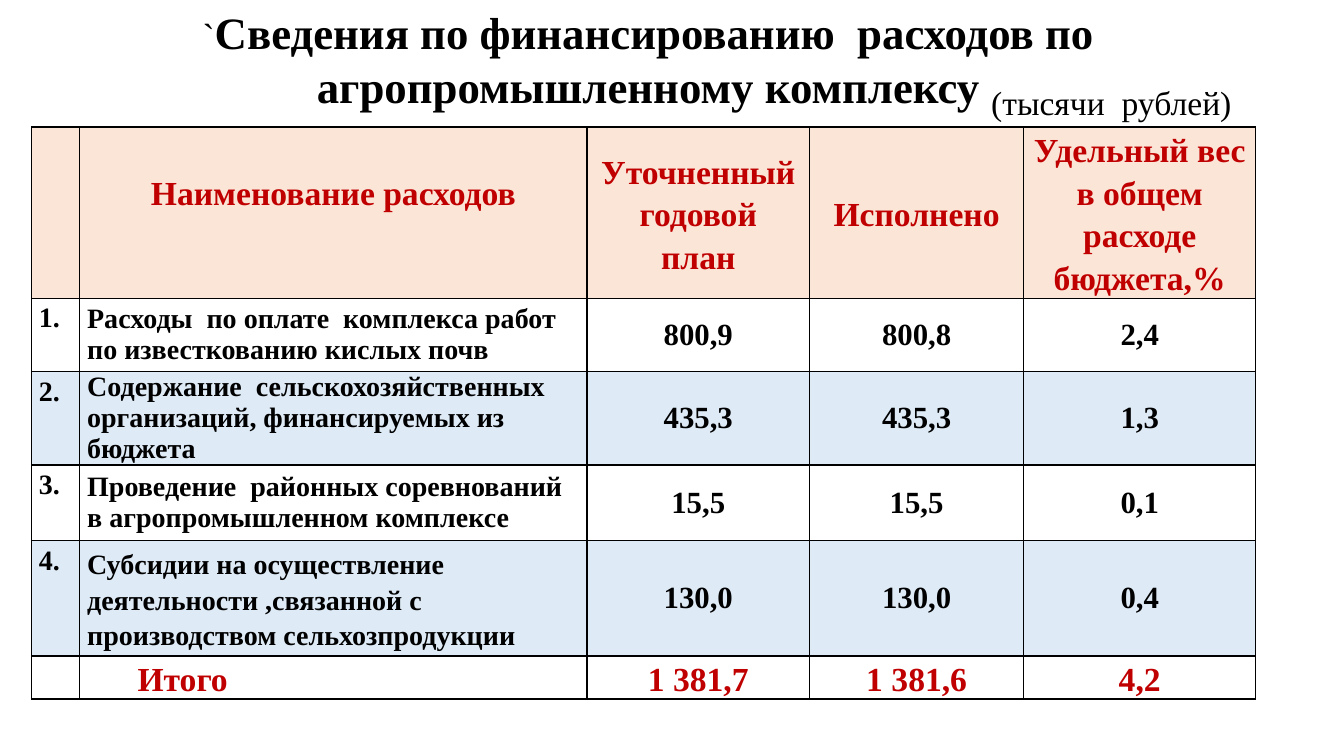
"""Build the slide on agro-industrial budget spending."""
from dataclasses import dataclass

from lxml.etree import SubElement
from pptx import Presentation
from pptx.dml.color import RGBColor
from pptx.enum.text import MSO_ANCHOR, MSO_AUTO_SIZE, PP_ALIGN
from pptx.oxml.ns import qn
from pptx.slide import Slide
from pptx.table import _Cell
from pptx.util import Pt

EMU_PER_PX = 9525
FONT = "Times New Roman"
COLORS = {
    "black": "000000",
    "red": "C00000",
    "peach": "FBE5D6",
    "blue": "DEEBF7",
    "white": "FFFFFF",
}
COLUMN_WIDTHS = (46, 483, 212, 204, 221)


@dataclass(frozen=True)
class CellStyle:
    size: int
    color: str = "black"
    align: PP_ALIGN = PP_ALIGN.CENTER
    anchor: MSO_ANCHOR = MSO_ANCHOR.MIDDLE
    spacing: float = 1.0
    left: int = 7
    top: int = 0


@dataclass(frozen=True)
class TableRow:
    height: int
    fill: str
    texts: tuple[str, ...]
    styles: tuple[CellStyle, ...]


@dataclass(frozen=True)
class TextRun:
    text: str
    size: int
    bold: bool = False


@dataclass(frozen=True)
class Caption:
    box: tuple[int, int, int, int]
    runs: tuple[TextRun, ...]


HEADER = CellStyle(24, "red", spacing=1.15)
HEADER_TOP = CellStyle(24, "red", anchor=MSO_ANCHOR.TOP, spacing=1.15)
HEADER_NAME = CellStyle(24, "red", anchor=MSO_ANCHOR.TOP, spacing=1.15, top=41)
NUMBER = CellStyle(20, align=PP_ALIGN.LEFT, anchor=MSO_ANCHOR.TOP, spacing=1.15)
NAME = CellStyle(20, align=PP_ALIGN.LEFT)
WIDE_NAME = CellStyle(20, align=PP_ALIGN.LEFT, spacing=1.15)
VALUE = CellStyle(22)
TOTAL_NAME = CellStyle(
    24, "red", PP_ALIGN.LEFT, MSO_ANCHOR.TOP, spacing=1.15, left=55
)

HEADER_STYLES = (HEADER, HEADER_NAME, HEADER, HEADER, HEADER_TOP)
ITEM_STYLES = (NUMBER, NAME, VALUE, VALUE, VALUE)
WIDE_STYLES = (NUMBER, WIDE_NAME, VALUE, VALUE, VALUE)
TOTAL_STYLES = (HEADER_TOP, TOTAL_NAME, HEADER_TOP, HEADER_TOP, HEADER_TOP)

ROWS = (
    TableRow(163, "peach", (
        "", "Наименование расходов", "Уточненный годовой\nплан", "Исполнено",
        "Удельный вес в общем расходе бюджета,%",
    ), HEADER_STYLES),
    TableRow(70, "white", (
        "1.", "Расходы  по оплате  комплекса работ по известкованию кислых почв",
        "800,9", "800,8", "2,4",
    ), ITEM_STYLES),
    TableRow(88, "blue", (
        "2.",
        "Содержание  сельскохозяйственных организаций, финансируемых из бюджета",
        "435,3", "435,3", "1,3",
    ), ITEM_STYLES),
    TableRow(72, "white", (
        "3.", "Проведение  районных соревнований в агропромышленном комплексе",
        "15,5", "15,5", "0,1",
    ), ITEM_STYLES),
    TableRow(110, "blue", (
        "4.",
        "Субсидии на осуществление деятельности ,связанной с "
        "производством сельхозпродукции",
        "130,0", "130,0", "0,4",
    ), WIDE_STYLES),
    TableRow(41, "white", ("", "Итого", "1 381,7", "1 381,6", "4,2"), TOTAL_STYLES),
)

CAPTIONS = (
    Caption((30, 0, 1175, 113), (
        TextRun("`", 26),
        TextRun(
            "Сведения по финансированию  расходов по агропромышленному комплексу",
            32, True,
        ),
    )),
    Caption((934, 73, 249, 48), (TextRun("(тысячи  рублей)", 24),)),
)


def px(length: int) -> int:
    return length * EMU_PER_PX


def rgb(name: str) -> RGBColor:
    return RGBColor.from_string(COLORS[name])


def add_borders(cell: _Cell) -> None:
    properties = cell._tc.get_or_add_tcPr()
    for side in ("lnL", "lnR", "lnT", "lnB"):
        line = SubElement(properties, qn(f"a:{side}"), w=str(Pt(1)))
        fill = SubElement(line, qn("a:solidFill"))
        SubElement(fill, qn("a:srgbClr"), val=COLORS["black"])


def fill_cell(cell: _Cell, text: str, style: CellStyle, fill: str) -> None:
    add_borders(cell)
    cell.fill.solid()
    cell.fill.fore_color.rgb = rgb(fill)
    cell.vertical_anchor = style.anchor
    cell.margin_left, cell.margin_right = px(style.left), px(7)
    cell.margin_top, cell.margin_bottom = px(style.top), 0
    cell.text = text
    for paragraph in cell.text_frame.paragraphs:
        paragraph.alignment = style.align
        paragraph.line_spacing = style.spacing
        paragraph.font.name = FONT
        paragraph.font.size = Pt(style.size)
        paragraph.font.bold = True
        paragraph.font.color.rgb = rgb(style.color)


def add_spending_table(slide: Slide) -> None:
    height = sum(row.height for row in ROWS)
    table = slide.shapes.add_table(
        len(ROWS), len(COLUMN_WIDTHS),
        px(30), px(121), px(sum(COLUMN_WIDTHS)), px(height),
    ).table
    table.first_row = False
    table.horz_banding = False
    for column, width in zip(table.columns, COLUMN_WIDTHS):
        column.width = px(width)
    for table_row, row in zip(table.rows, ROWS):
        table_row.height = px(row.height)
        for cell, text, style in zip(table_row.cells, row.texts, row.styles):
            fill_cell(cell, text, style, row.fill)


def add_caption(slide: Slide, caption: Caption) -> None:
    shape = slide.shapes.add_textbox(*map(px, caption.box))
    frame = shape.text_frame
    frame.word_wrap = True
    frame.auto_size = MSO_AUTO_SIZE.SHAPE_TO_FIT_TEXT
    paragraph = frame.paragraphs[0]
    paragraph.alignment = PP_ALIGN.CENTER
    paragraph.font.name = FONT
    paragraph.font.color.rgb = rgb("black")
    for part in caption.runs:
        run = paragraph.add_run()
        run.text = part.text
        run.font.size = Pt(part.size)
        run.font.bold = part.bold


def main() -> None:
    presentation = Presentation()
    presentation.slide_width = px(1280)
    presentation.slide_height = px(720)
    slide = presentation.slides.add_slide(presentation.slide_layouts[6])
    add_spending_table(slide)
    for caption in CAPTIONS:
        add_caption(slide, caption)
    presentation.save("out.pptx")


if __name__ == "__main__":
    main()
